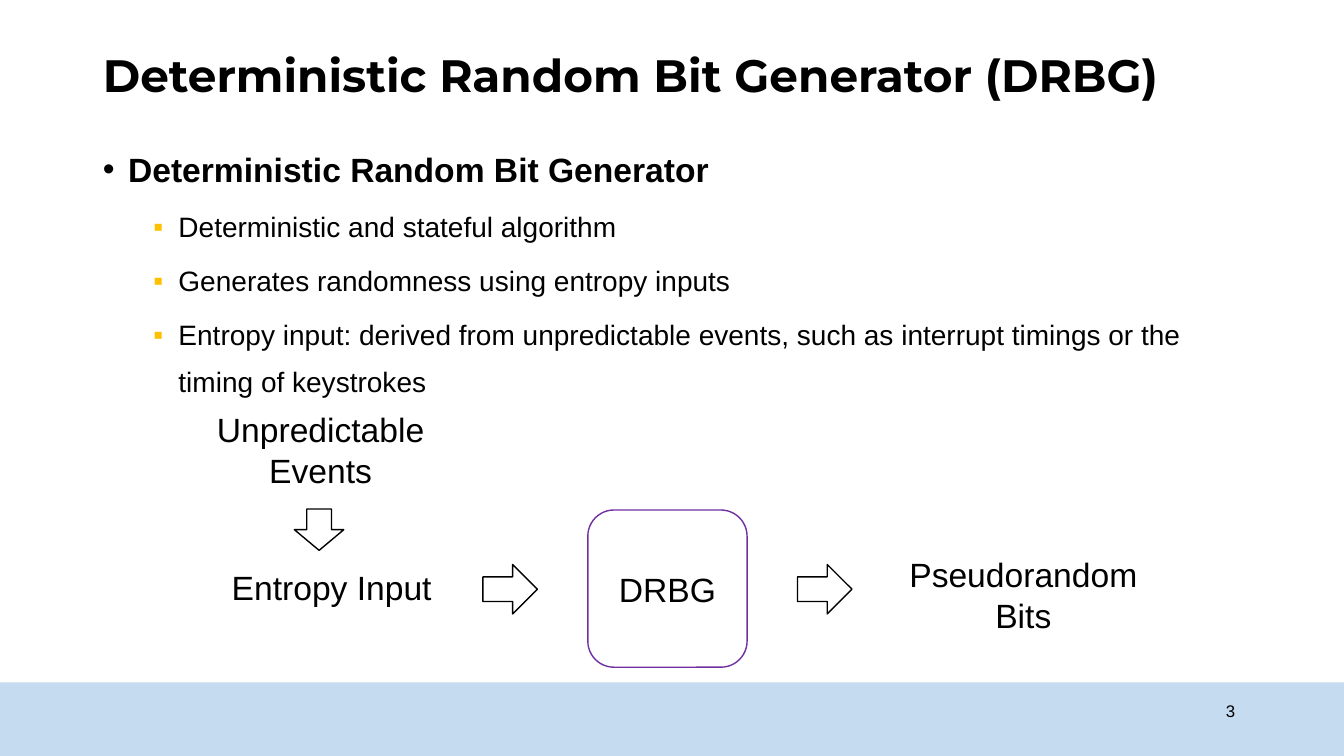
from dataclasses import dataclass

from lxml.etree import SubElement
from pptx import Presentation
from pptx.dml.color import RGBColor
from pptx.enum.shapes import MSO_SHAPE
from pptx.enum.text import MSO_ANCHOR, MSO_AUTO_SIZE, PP_ALIGN
from pptx.oxml.ns import qn
from pptx.util import Inches, Pt


@dataclass(frozen=True)
class Theme:
    text: str = "000000"
    band: str = "9DC3E6"
    band_opacity: int = 60
    sub_bullet: str = "FFC000"
    generator: str = "7030A0"
    heading_font: str = "Montserrat"
    body_font: str = "Arial"
    title_size: float = 32.4
    main_size: int = 24
    sub_size: int = 20
    number_size: int = 12
    line_width: int = 1


THEME = Theme()

BULLETS = [
    (0, "Deterministic Random Bit Generator"),
    (1, "Deterministic and stateful algorithm"),
    (1, "Generates randomness using entropy inputs"),
    (1, "Entropy input: derived from unpredictable events, such as "
        "interrupt timings or the timing of keystrokes"),
]


def place(item, left, top, width, height):
    item.left, item.top = Inches(left), Inches(top)
    item.width, item.height = Inches(width), Inches(height)


def style(paragraph, size, font=THEME.body_font, bold=False, align=PP_ALIGN.LEFT):
    paragraph.alignment = align
    for run in paragraph.runs:
        run.font.name = font
        run.font.size = Pt(size)
        run.font.bold = bold
        run.font.color.rgb = RGBColor.from_string(THEME.text)


def add_title(slide, text):
    title = slide.shapes.title
    place(title, 0.92, 0.4, 11.5, 0.74)
    frame = title.text_frame
    frame.text = text
    frame.auto_size = MSO_AUTO_SIZE.NONE
    frame.vertical_anchor = MSO_ANCHOR.MIDDLE
    frame.paragraphs[0].line_spacing = 0.9
    style(frame.paragraphs[0], THEME.title_size, THEME.heading_font, bold=True)


def set_bullet(paragraph, char, color, indent):
    properties = paragraph._p.get_or_add_pPr()
    properties.set("marL", str(Inches(indent)))
    properties.set("indent", str(Inches(-0.25)))
    fill = SubElement(properties, qn("a:buClr"))
    SubElement(fill, qn("a:srgbClr"), val=color)
    SubElement(properties, qn("a:buFont"), typeface=THEME.body_font)
    SubElement(properties, qn("a:buChar"), char=char)


def add_bullets(slide, bullets):
    body = slide.placeholders[1]
    place(body, 0.92, 1.27, 11.5, 5.48)
    frame = body.text_frame
    frame.text = "\n".join(text for _, text in bullets)
    frame.auto_size = MSO_AUTO_SIZE.NONE
    for paragraph, (level, _) in zip(frame.paragraphs, bullets):
        paragraph.level = level
        paragraph.line_spacing = 1.4
        paragraph.space_before = Pt(5 if level else 10)
        if level:
            style(paragraph, THEME.sub_size)
            set_bullet(paragraph, "▪", THEME.sub_bullet, 0.75)
        else:
            style(paragraph, THEME.main_size, bold=True)
            set_bullet(paragraph, "•", THEME.text, 0.25)


def add_label(slide, text, left, top, width, height,
              size=THEME.main_size, align=PP_ALIGN.CENTER):
    label = slide.shapes.add_textbox(
        Inches(left), Inches(top), Inches(width), Inches(height))
    label.text_frame.word_wrap = True
    label.text_frame.text = text
    style(label.text_frame.paragraphs[0], size, align=align)


def add_outline(slide, preset, left, top, width, height, color):
    outline = slide.shapes.add_shape(
        preset, Inches(left), Inches(top), Inches(width), Inches(height))
    outline.shadow.inherit = False
    outline.fill.background()
    outline.line.color.rgb = RGBColor.from_string(color)
    outline.line.width = Pt(THEME.line_width)
    return outline


def add_arrow(slide, left, top, width=0.54, rotation=0):
    arrow = add_outline(slide, MSO_SHAPE.RIGHT_ARROW, left, top, width, 0.49,
                        THEME.text)
    arrow.rotation = rotation


def add_generator(slide, text):
    generator = add_outline(slide, MSO_SHAPE.ROUNDED_RECTANGLE,
                            5.83, 5.06, 1.58, 1.56, THEME.generator)
    frame = generator.text_frame
    frame.text = text
    frame.vertical_anchor = MSO_ANCHOR.MIDDLE
    style(frame.paragraphs[0], THEME.main_size, align=PP_ALIGN.CENTER)


def add_footer(slide, number):
    band = slide.shapes.add_shape(
        MSO_SHAPE.RECTANGLE, 0, Inches(6.77), Inches(13.33), Inches(0.73))
    band.shadow.inherit = False
    band.line.fill.background()
    band.fill.solid()
    band.fill.fore_color.rgb = RGBColor.from_string(THEME.band)
    color = band._element.spPr.find(qn("a:solidFill")).find(qn("a:srgbClr"))
    SubElement(color, qn("a:alpha"), val=str(THEME.band_opacity * 1000))
    add_label(slide, number, 9.4, 6.9, 2.95, 0.3,
              THEME.number_size, PP_ALIGN.RIGHT)


def main():
    deck = Presentation()
    deck.slide_width, deck.slide_height = Inches(13.33), Inches(7.5)
    slide = deck.slides.add_slide(deck.slide_layouts[1])

    add_footer(slide, "3")
    add_title(slide, "Deterministic Random Bit Generator (DRBG)")
    add_bullets(slide, BULLETS)

    # Flow from events to random bits
    add_label(slide, "Unpredictable Events", 1.81, 4.01, 2.74, 0.91)
    add_arrow(slide, 2.96, 5.01, width=0.41, rotation=90)
    add_label(slide, "Entropy Input", 1.92, 5.58, 2.74, 0.5)
    add_arrow(slide, 4.79, 5.6)
    add_generator(slide, "DRBG")
    add_arrow(slide, 7.91, 5.6)
    add_label(slide, "Pseudorandom Bits", 8.78, 5.45, 2.74, 0.91)

    deck.save("out.pptx")


if __name__ == "__main__":
    main()
